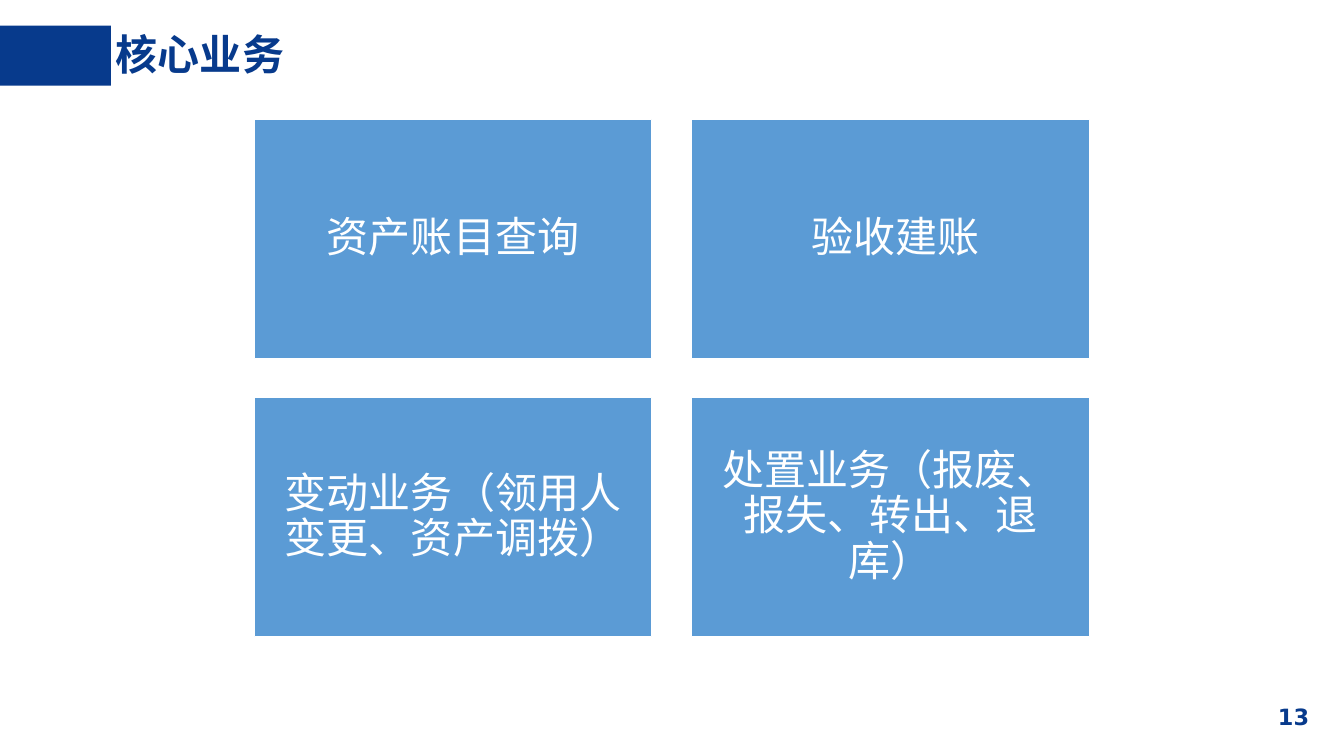
from dataclasses import dataclass

from lxml.etree import SubElement
from pptx import Presentation
from pptx.dml.color import RGBColor
from pptx.enum.shapes import MSO_SHAPE
from pptx.enum.text import MSO_ANCHOR as Anchor, MSO_AUTO_SIZE as AutoSize, PP_ALIGN as Align
from pptx.oxml.ns import qn
from pptx.util import Emu, Pt

EMU_PER_PX = 9144  # 100 px to the inch
NAVY = RGBColor(0x07, 0x3A, 0x8C)
BLUE = RGBColor(0x5B, 0x9B, 0xD5)
WHITE = RGBColor(0xFF, 0xFF, 0xFF)
CJK_FONT = "Noto Sans CJK SC"
NUMBER_FONT = "DejaVu Sans"

GRID_LEFT, GRID_TOP = 504, 237
CARD_WIDTH, CARD_HEIGHT = 789, 474
COLUMN_GAP, ROW_GAP = 79, 78
COLUMNS = 2


@dataclass(frozen=True)
class Card:
    text: str
    left_inset: int = 25


CARDS = [
    Card("资产账目查询"),
    Card("验收建账", left_inset=45),
    Card("变动业务（领用人变更、资产调拨）"),
    Card("处置业务（报废、报失、转出、退库）"),
]


def px(length: int) -> Emu:
    return Emu(length * EMU_PER_PX)


def place(left: int, top: int, width: int, height: int) -> tuple[Emu, ...]:
    return px(left), px(top), px(width), px(height)


def write(shape, text: str, size: int, font: str, color: RGBColor,
          bold: bool, align: Align, spacing: float = 1.0) -> None:
    """Put one formatted paragraph into a shape."""
    frame = shape.text_frame
    frame.text = text
    frame.word_wrap = True
    frame.auto_size = AutoSize.NONE
    paragraph = frame.paragraphs[0]
    paragraph.alignment = align
    paragraph.line_spacing = spacing
    run = paragraph.runs[0]
    run.font.size = Pt(size)
    run.font.bold = bold
    run.font.color.rgb = color
    run.font.name = font
    SubElement(run.font._element, qn("a:ea"), typeface=font)


def set_insets(shape, left: int, top: int, right: int, bottom: int) -> None:
    frame = shape.text_frame
    frame.margin_left, frame.margin_top = px(left), px(top)
    frame.margin_right, frame.margin_bottom = px(right), px(bottom)


def add_rectangle(slide, box: tuple[Emu, ...], color: RGBColor):
    shape = slide.shapes.add_shape(MSO_SHAPE.RECTANGLE, *box)
    shape.shadow.inherit = False
    shape.fill.solid()
    shape.fill.fore_color.rgb = color
    shape.line.fill.background()
    return shape


def add_card(slide, card: Card, index: int) -> None:
    row, column = divmod(index, COLUMNS)
    left = GRID_LEFT + column * (CARD_WIDTH + COLUMN_GAP)
    top = GRID_TOP + row * (CARD_HEIGHT + ROW_GAP)
    shape = add_rectangle(slide, place(left, top, CARD_WIDTH, CARD_HEIGHT), BLUE)
    shape.line.color.rgb = WHITE
    shape.line.width = Pt(1)
    write(shape, card.text, 60, CJK_FONT, WHITE, False, Align.CENTER, 0.9)
    shape.text_frame.vertical_anchor = Anchor.MIDDLE
    set_insets(shape, card.left_inset, 25, 25, 25)


def main() -> None:
    presentation = Presentation()
    presentation.slide_width, presentation.slide_height = px(2666), px(1500)
    slide = presentation.slides.add_slide(presentation.slide_layouts[5])

    # Title and its accent bar
    add_rectangle(slide, place(0, 51, 220, 119), NAVY)
    title = slide.shapes.title
    title.left, title.top, title.width, title.height = place(220, 53, 2062, 118)
    write(title, "核心业务", 60, CJK_FONT, NAVY, True, Align.LEFT, 0.9)
    title.text_frame.vertical_anchor = Anchor.MIDDLE

    # Grid of business cards
    for index, card in enumerate(CARDS):
        add_card(slide, card, index)

    # Page number
    number = slide.shapes.add_textbox(*place(2466, 1376, 200, 94))
    write(number, "13", 32, NUMBER_FONT, NAVY, True, Align.CENTER)
    set_insets(number, 40, 20, 40, 20)

    presentation.save("out.pptx")


if __name__ == "__main__":
    main()
